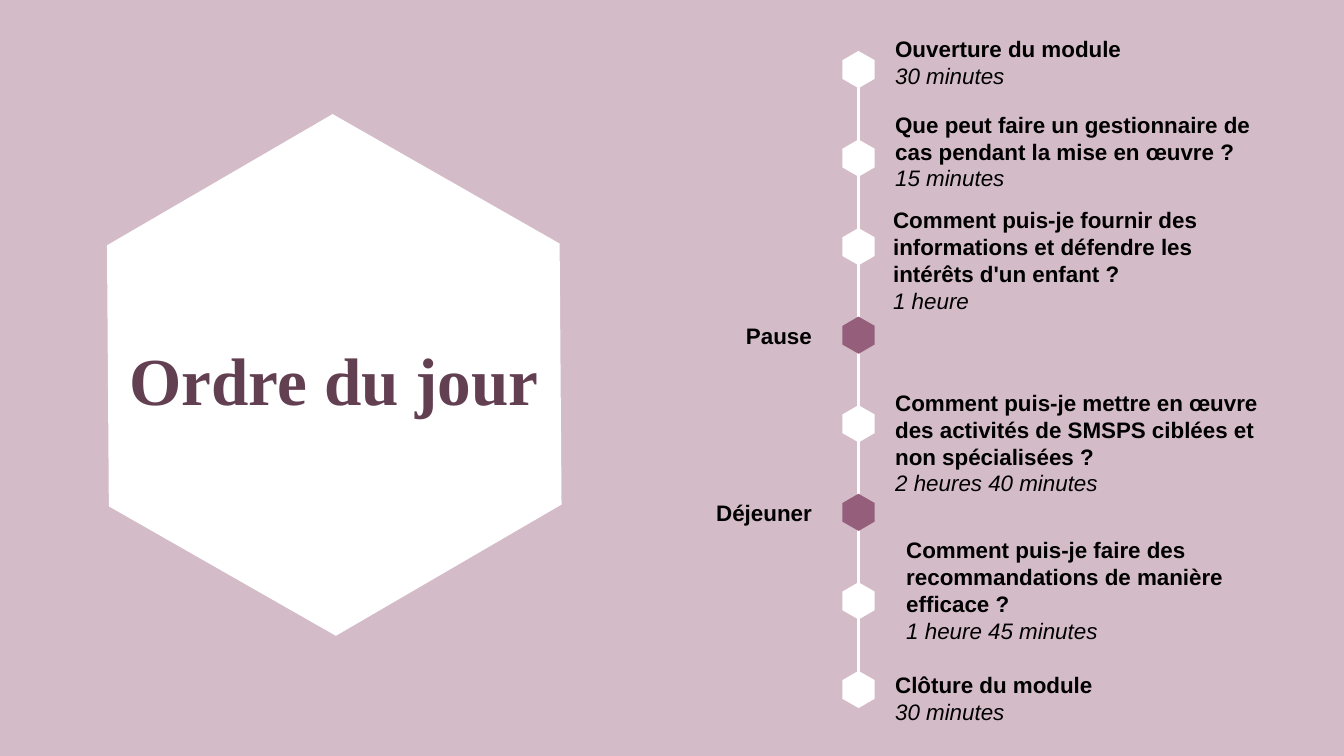
from lxml.etree import SubElement
from pptx import Presentation
from pptx.dml.color import RGBColor
from pptx.enum.shapes import MSO_CONNECTOR, MSO_SHAPE
from pptx.enum.text import MSO_ANCHOR, MSO_AUTO_SIZE, PP_ALIGN
from pptx.oxml.ns import qn
from pptx.util import Inches, Pt

COLORS = {
    "background": "D4BBC8",
    "session": "FFFFFF",
    "break": "955F7B",
    "title": "633F52",
    "text": "000000",
}
SESSIONS = [
    ("Ouverture du module", "30 minutes", (8.78, 0.3, 3.21, 0.64)),
    ("Que peut faire un gestionnaire de cas pendant la mise en œuvre ?",
     "15 minutes", (8.78, 1.05, 3.98, 0.91)),
    ("Comment puis-je fournir des informations et défendre les intérêts d'un enfant ?",
     "1 heure", (8.76, 2, 3.98, 0.91)),
    ("Comment puis-je mettre en œuvre des activités de SMSPS ciblées et non spécialisées ?",
     "2 heures 40 minutes", (8.78, 3.81, 3.98, 0.91)),
    ("Comment puis-je faire des recommandations de manière efficace ?",
     "1 heure 45 minutes", (8.89, 5.27, 4, 0.64)),
    ("Clôture du module", "30 minutes", (8.78, 6.61, 3.21, 0.64)),
]
BREAKS = {3: "Pause", 5: "Déjeuner"}
STOP_COUNT = len(SESSIONS) + len(BREAKS)


def color(name):
    return RGBColor.from_string(COLORS[name])


def add_hexagon(slide, box, fill):
    hexagon = slide.shapes.add_shape(MSO_SHAPE.HEXAGON, *map(Inches, box))
    hexagon.adjustments[0] = 0.29
    hexagon.rotation = 29.7
    hexagon.shadow.inherit = False
    hexagon.fill.solid()
    hexagon.fill.fore_color.rgb = color(fill)
    hexagon.line.fill.background()


def add_label(slide, box, heading, duration=None, align=PP_ALIGN.LEFT):
    frame = slide.shapes.add_textbox(*map(Inches, box)).text_frame
    frame.word_wrap = True
    frame.auto_size = MSO_AUTO_SIZE.SHAPE_TO_FIT_TEXT
    frame.text = f"{heading}\n{duration}" if duration else heading
    for index, paragraph in enumerate(frame.paragraphs):
        paragraph.alignment = align
        paragraph.font.name = "Arial"
        paragraph.font.size = Pt(16)
        paragraph.font.bold = index == 0
        paragraph.font.italic = index == 1
        paragraph.font.color.rgb = color("text")


def add_title_panel(slide, box):
    left, top, width, height = box
    add_hexagon(slide, box, "session")
    title = slide.shapes.title
    title.element.getparent().append(title.element)
    title.left, title.top = Inches(left + 0.4), Inches(top + 2.02)
    title.width, title.height = Inches(width - 0.8), Inches(0.61)
    frame = title.text_frame
    frame.text = "Ordre du jour"
    frame.word_wrap = True
    frame.auto_size = MSO_AUTO_SIZE.NONE
    frame.vertical_anchor = MSO_ANCHOR.MIDDLE
    heading = frame.paragraphs[0]
    heading.alignment = PP_ALIGN.CENTER
    heading.line_spacing = 0.9
    heading.font.name = "Times New Roman"
    heading.font.size = Pt(48)
    heading.font.bold = True
    heading.font.color.rgb = color("title")


def add_timeline(slide, box):
    left, top, width, height = box
    center = left + width / 2
    axis = slide.shapes.add_connector(
        MSO_CONNECTOR.STRAIGHT, Inches(center), Inches(top),
        Inches(center), Inches(top + height))
    axis.line.color.rgb = color("session")
    axis.line.width = Pt(2.25)
    SubElement(axis.element.spPr, qn("a:effectLst"))

    marker_height = 0.32
    first = top + 0.07
    step = (top + height - first) / (STOP_COUNT - 1)
    for stop in range(STOP_COUNT):
        middle = first + stop * step
        marker = (left, middle - marker_height / 2, width, marker_height)
        add_hexagon(slide, marker, "break" if stop in BREAKS else "session")
        if stop in BREAKS:
            add_label(slide, (left - 1.66, middle - 0.18, 1.48, 0.37),
                      BREAKS[stop], align=PP_ALIGN.RIGHT)

    for heading, duration, label_box in SESSIONS:
        add_label(slide, label_box, heading, duration)


def main():
    deck = Presentation()
    deck.slide_width, deck.slide_height = Inches(13.33), Inches(7.5)
    slide = deck.slides.add_slide(deck.slide_layouts[5])
    slide.background.fill.solid()
    slide.background.fill.fore_color.rgb = color("background")
    add_title_panel(slide, (0.72, 1.48, 5.19, 4.48))
    add_timeline(slide, (8.33, 0.62, 0.37, 6.22))
    deck.save("out.pptx")


if __name__ == "__main__":
    main()
